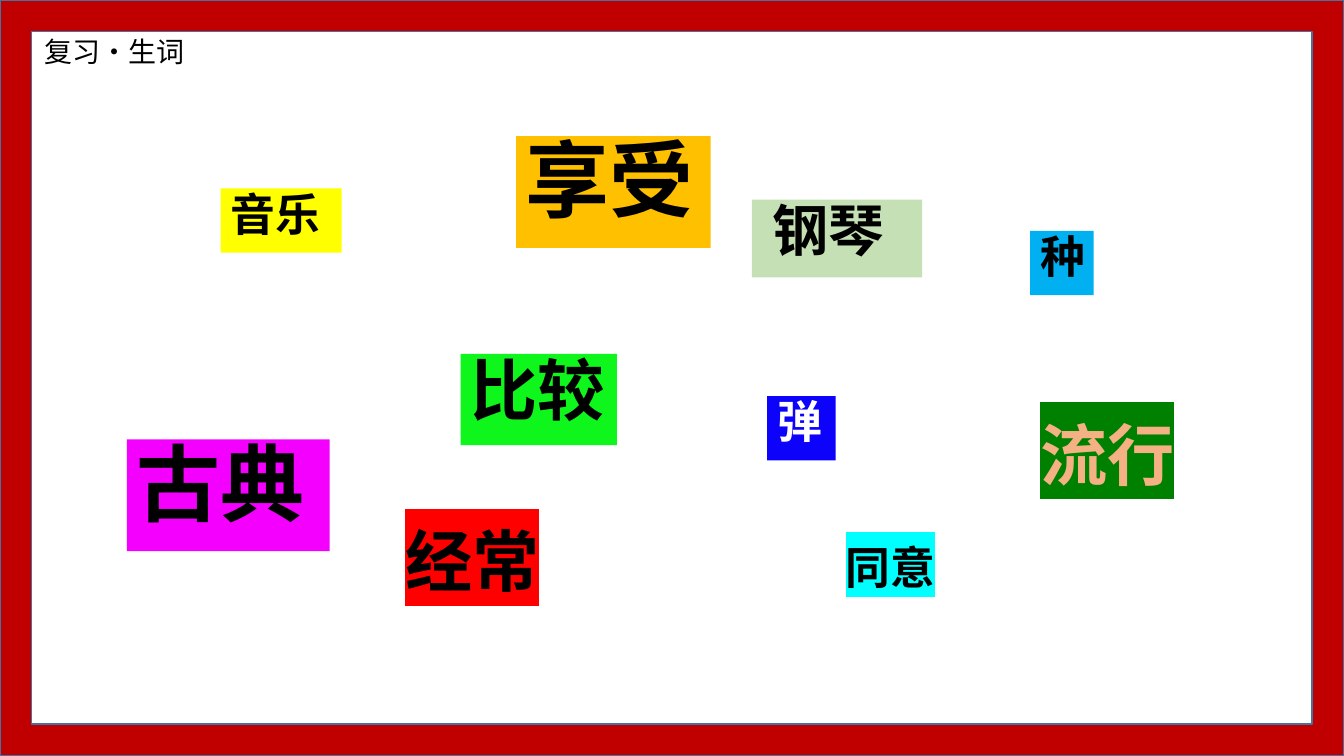
from dataclasses import dataclass

from lxml import etree
from pptx import Presentation
from pptx import util as u
from pptx.dml.color import RGBColor
from pptx.enum import shapes, text
from pptx.oxml import ns


@dataclass(frozen=True)
class Theme:
    font: str = "Noto Sans CJK SC"
    black: str = "000000"
    white: str = "FFFFFF"
    peach: str = "F4B183"
    frame_red: str = "C00000"
    frame_line: str = "43739E"
    frame_share: float = 0.042
    title: int = 20
    small: int = 32
    medium: int = 40
    large: int = 48
    huge: int = 60
    line_height: float = 1.21
    line_spacing: float = 0.88


@dataclass(frozen=True)
class Word:
    """A vocabulary card; column, row and width are in grid units."""
    characters: str
    column: float
    row: float
    width: float
    size: int
    background: str
    color: str = "000000"
    highlighted: bool = False
    indent: float = 0


THEME = Theme()
SLIDE_WIDTH, SLIDE_HEIGHT = u.Inches(13.333), u.Inches(7.5)
COLUMN, ROW = SLIDE_WIDTH / 40, SLIDE_HEIGHT / 30
SIDE_MARGIN, TOP_MARGIN = u.Inches(0.1), u.Inches(0.05)

WORDS = [
    Word("弹", 22.83, 15.72, 2.04, THEME.small, "0D02FA", THEME.white),
    Word("享受", 15.36, 5.4, 5.79, THEME.huge, "FFC000"),
    Word("古典", 3.78, 17.44, 6.03, THEME.huge, "F300FE"),
    Word("比较", 13.71, 14.04, 4.65, THEME.large, "0EF61B"),
    Word("钢琴", 22.38, 7.92, 5.07, THEME.medium, "C5E0B4", indent=0.3),
    Word("音乐", 6.57, 7.48, 3.6, THEME.small, "FFFF00"),
    Word("经常", 11.76, 20.84, 5.55, THEME.large, "FF0000", highlighted=True),
    Word("同意", 24.87, 21.48, 3.6, THEME.small, "00FFFF", highlighted=True),
    Word("种", 30.66, 9.16, 1.89, THEME.small, "00B0F0"),
    Word("流行", 30.66, 16.6, 4.71, THEME.large, "008000", THEME.peach, True),
]


def box_height(size: int) -> int:
    """Height of a box that holds one line of the given type size."""
    return u.Pt(size * THEME.line_height) + 2 * TOP_MARGIN


def highlight(run, color: str) -> None:
    marker = etree.Element(ns.qn("a:highlight"))
    etree.SubElement(marker, ns.qn("a:srgbClr"), val=color)
    run.font.fill._xPr.find(ns.qn("a:solidFill")).addnext(marker)


def write_line(shape, characters: str, size: int, color: str, bold: bool,
               indent: float = 0):
    """Fill a shape with one left-aligned line and return its run."""
    frame = shape.text_frame
    frame.text = characters
    frame.word_wrap = True
    frame.auto_size = text.MSO_AUTO_SIZE.NONE
    frame.vertical_anchor = text.MSO_ANCHOR.TOP
    frame.margin_left = SIDE_MARGIN + round(indent * COLUMN)
    frame.margin_right = SIDE_MARGIN
    frame.margin_top = frame.margin_bottom = TOP_MARGIN
    paragraph = frame.paragraphs[0]
    paragraph.alignment = text.PP_ALIGN.LEFT
    paragraph.line_spacing = THEME.line_spacing
    run = paragraph.runs[0]
    run.font.size = u.Pt(size)
    run.font.bold = bold
    run.font.color.rgb = RGBColor.from_string(color)
    run.font.name = THEME.font
    latin = run._r.rPr.find(ns.qn("a:latin"))
    latin.addnext(etree.Element(ns.qn("a:ea"), typeface=THEME.font))
    return run


def add_frame(slide) -> None:
    frame = slide.shapes.add_shape(
        shapes.MSO_SHAPE.FRAME, 0, 0, SLIDE_WIDTH, SLIDE_HEIGHT)
    frame.adjustments[0] = THEME.frame_share
    frame.shadow.inherit = False
    frame.fill.solid()
    frame.fill.fore_color.rgb = RGBColor.from_string(THEME.frame_red)
    frame.line.color.rgb = RGBColor.from_string(THEME.frame_line)
    frame.line.width = u.Pt(1)


def add_title(slide, characters: str) -> None:
    title = slide.shapes.title
    title.left, title.top = round(1.02 * COLUMN), round(1.36 * ROW)
    title.width, title.height = round(7 * COLUMN), box_height(THEME.title)
    write_line(title, characters, THEME.title, THEME.black, bold=False)


def add_word(slide, word: Word) -> None:
    card = slide.shapes.add_textbox(
        round(word.column * COLUMN), round(word.row * ROW),
        round(word.width * COLUMN), box_height(word.size))
    run = write_line(card, word.characters, word.size, word.color,
                     bold=True, indent=word.indent)
    if word.highlighted:
        highlight(run, word.background)
    else:
        card.fill.solid()
        card.fill.fore_color.rgb = RGBColor.from_string(word.background)


def main() -> None:
    presentation = Presentation()
    presentation.slide_width = SLIDE_WIDTH
    presentation.slide_height = SLIDE_HEIGHT
    slide = presentation.slides.add_slide(presentation.slide_layouts[5])
    add_frame(slide)
    add_title(slide, "复习·生词")
    for word in WORDS:
        add_word(slide, word)
    presentation.save("out.pptx")


if __name__ == "__main__":
    main()
